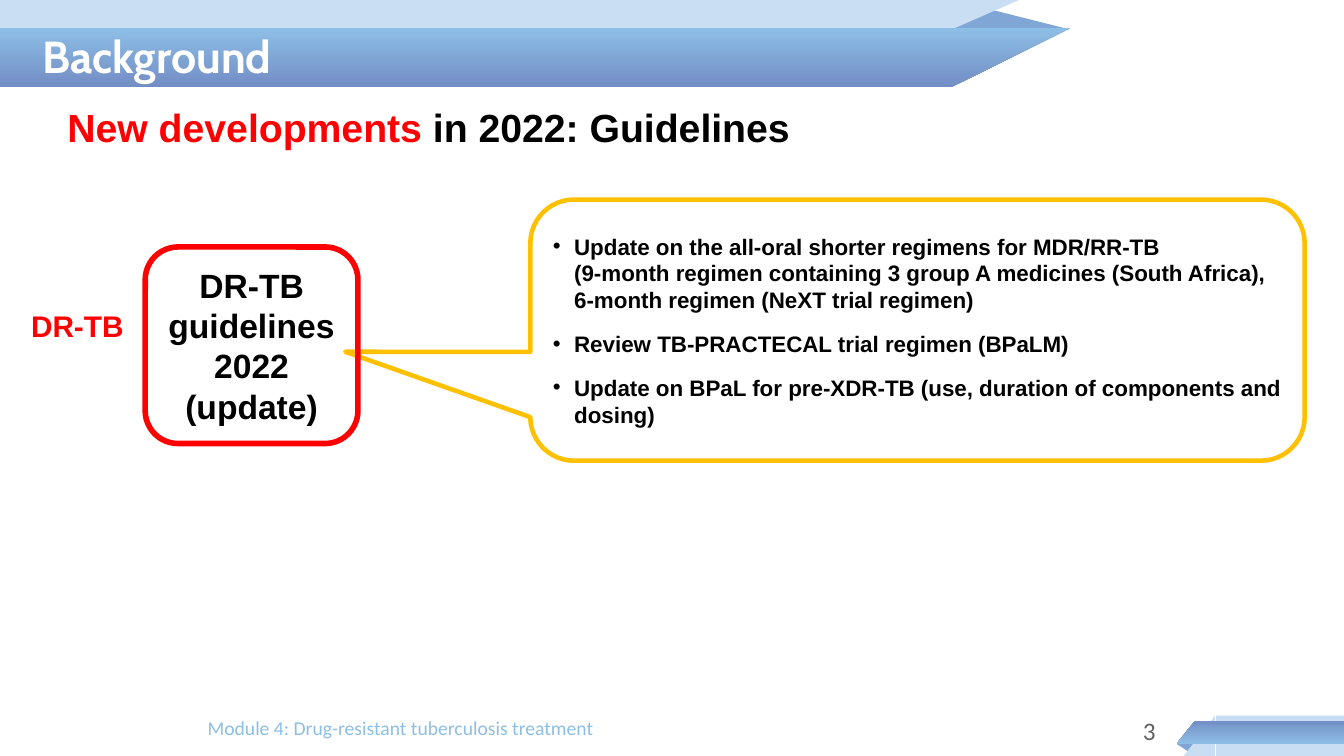
from copy import deepcopy

from lxml import etree
from pptx import Presentation, util as u
from pptx.dml.color import RGBColor
from pptx.enum import shapes, text
from pptx.oxml.ns import qn

COLORS = {
    "pale": "C9DDF3", "mid": "80A6D5", "deep": "738EC5", "sky": "8DBEE6",
    "red": "FF0000", "amber": "FFC000", "black": "000000",
    "white": "FFFFFF", "gray": "606060",
}
PRESET = shapes.MSO_SHAPE
MIDDLE = text.MSO_ANCHOR.MIDDLE
CENTER, RIGHT = text.PP_ALIGN.CENTER, text.PP_ALIGN.RIGHT

# preset, (left, top, width, height), fill, rotation, flips, adjustments
HEADER_RIBBON = [
    (PRESET.ISOSCELES_TRIANGLE, (9.43, 0.09, 1.17, 0.2), "mid", 0, "", [0.324]),
    (PRESET.RECTANGLE, (0, -0.01, 8.15, 0.87), "pale", 180, "H", []),
    (PRESET.RIGHT_TRIANGLE, (8.14, -0.01, 1.99, 0.87), "pale", 180, "H", []),
    (PRESET.RECTANGLE, (0, 0.28, 9.45, 0.58), "gradient", 180, "H", []),
    (PRESET.RIGHT_TRIANGLE, (9.45, 0.28, 1.16, 0.58), "gradient", 180, "H", []),
]
FOOTER_RIBBON = [
    (PRESET.ISOSCELES_TRIANGLE, (11.67, 7.38, 0.18, 0.08), "mid", 0, "HV", [0.324]),
    (PRESET.RECTANGLE, (12.06, 7.1, 1.28, 0.4), "pale", 180, "V", []),
    (PRESET.RIGHT_TRIANGLE, (11.74, 7.1, 0.31, 0.4), "pale", 180, "V", []),
    (PRESET.RECTANGLE, (11.85, 7.15, 1.48, 0.23), "gradient", 180, "V", []),
    (PRESET.RIGHT_TRIANGLE, (11.67, 7.15, 0.18, 0.23), "gradient", 180, "V", []),
]
UPDATES = [
    "Update on the all-oral shorter regimens for MDR/RR-TB \v"
    "(9-month regimen containing 3 group A medicines (South Africa),\v"
    "6-month regimen (NeXT trial regimen)",
    "Review TB-PRACTECAL trial regimen (BPaLM)",
    "Update on BPaL for pre-XDR-TB (use, duration of components and dosing)",
]


def rgb(name):
    return RGBColor.from_string(COLORS[name])


def inches(box):
    return [u.Inches(value) for value in box]


def style(name, size, color, bold=True):
    return {"name": name, "size": u.Pt(size), "bold": bold, "color": color}


def apply_style(paragraph, font_style):
    """Format every run and line break of the paragraph."""
    for run in paragraph.runs:
        for key, value in font_style.items():
            if key == "color":
                run.font.color.rgb = rgb(value)
            else:
                setattr(run.font, key, value)
    for line_break in paragraph._p.findall(qn("a:br")):
        line_break.append(deepcopy(paragraph.runs[0]._r.rPr))


def add_ribbon(slide, pieces):
    ribbon = slide.shapes.add_group_shape()
    for preset, box, fill, rotation, flips, adjustments in pieces:
        shape = ribbon.shapes.add_shape(preset, *inches(box))
        shape.shadow.inherit = False
        shape.line.fill.background()
        shape.rotation = rotation
        for axis in flips:
            shape._element.spPr.xfrm.set("flip" + axis, "1")
        for index, value in enumerate(adjustments):
            shape.adjustments[index] = value
        if fill == "gradient":
            shape.fill.gradient()
            shape.fill.gradient_angle = 270
            for stop, color in zip(shape.fill.gradient_stops, ("deep", "sky")):
                stop.color.rgb = rgb(color)
        else:
            shape.fill.solid()
            shape.fill.fore_color.rgb = rgb(fill)


def add_label(slide, box, parts, align=None, anchor=None, wrap=True):
    """Add a one-paragraph text box from (words, style) parts."""
    frame = slide.shapes.add_textbox(*inches(box)).text_frame
    frame.word_wrap = wrap
    frame.vertical_anchor = anchor
    paragraph = frame.paragraphs[0]
    paragraph.alignment = align
    for words, _ in parts:
        paragraph.add_run().text = words
    for run, (_, font_style) in zip(paragraph.runs, parts):
        for key, value in font_style.items():
            if key == "color":
                run.font.color.rgb = rgb(value)
            else:
                setattr(run.font, key, value)


def add_outline(slide, preset, box, color, width):
    shape = slide.shapes.add_shape(preset, *inches(box))
    shape.shadow.inherit = False
    shape.fill.background()
    shape.line.color.rgb = rgb(color)
    shape.line.width = u.Pt(width)
    shape.text_frame.word_wrap = True
    shape.text_frame.vertical_anchor = MIDDLE
    return shape


def add_bullet(paragraph):
    properties = paragraph._p.get_or_add_pPr()
    properties.set("marL", str(u.Inches(0.21)))
    properties.set("indent", str(u.Inches(-0.21)))
    etree.SubElement(properties, qn("a:buFont")).set("typeface", "Arial")
    etree.SubElement(properties, qn("a:buChar")).set("char", "•")


def add_updates_callout(slide):
    callout = add_outline(slide, PRESET.ROUNDED_RECTANGULAR_CALLOUT,
                          (5.26, 1.98, 7.68, 2.59), "amber", 3.25)
    for index, value in enumerate((-0.739, 0.083, 0.167)):
        callout.adjustments[index] = value
    frame = callout.text_frame
    for index, update in enumerate(UPDATES):
        paragraph = frame.add_paragraph() if index else frame.paragraphs[0]
        paragraph.text = update
        add_bullet(paragraph)
        paragraph.alignment = text.PP_ALIGN.LEFT
        paragraph.space_before = u.Pt(6 if index else 0)
        paragraph.space_after = u.Pt(6)
        apply_style(paragraph, style("Arial", 16, "black"))


def add_guidelines_box(slide):
    box = add_outline(slide, PRESET.ROUNDED_RECTANGLE,
                      (1.44, 2.45, 2.11, 1.95), "red", 4)
    paragraph = box.text_frame.paragraphs[0]
    paragraph.text = "DR-TB guidelines 2022 (update)"
    paragraph.alignment = CENTER
    apply_style(paragraph, style("Arial", 24, "black"))


def main():
    presentation = Presentation()
    presentation.slide_width = u.Inches(13.33)
    presentation.slide_height = u.Inches(7.5)
    slide = presentation.slides.add_slide(presentation.slide_layouts[6])

    add_ribbon(slide, HEADER_RIBBON)
    add_ribbon(slide, FOOTER_RIBBON)
    add_label(slide, (10.13, 7.05, 1.43, 0.4),
              [("3", style("Calibri", 18, "gray", False))], align=RIGHT)
    add_label(slide, (1.96, 7.05, 8.02, 0.4),
              [("Module 4: Drug-resistant tuberculosis treatment",
                style("Calibri", 14, "sky", False))])
    add_label(slide, (0.32, 0.11, 8.02, 0.89),
              [("Background", style("Cabin", 32, "white"))], anchor=MIDDLE)
    add_label(slide, (0.57, 0.98, 10.7, 0.46),
              [("New developments ", style("Arial", 28, "red")),
               ("in 2022: Guidelines", style("Arial", 28, "black"))])
    add_updates_callout(slide)
    add_guidelines_box(slide)
    add_label(slide, (0.21, 3, 1.13, 0.46),
              [("DR-TB", style("Arial", 21.3, "red"))], wrap=False)

    presentation.save("out.pptx")


if __name__ == "__main__":
    main()
